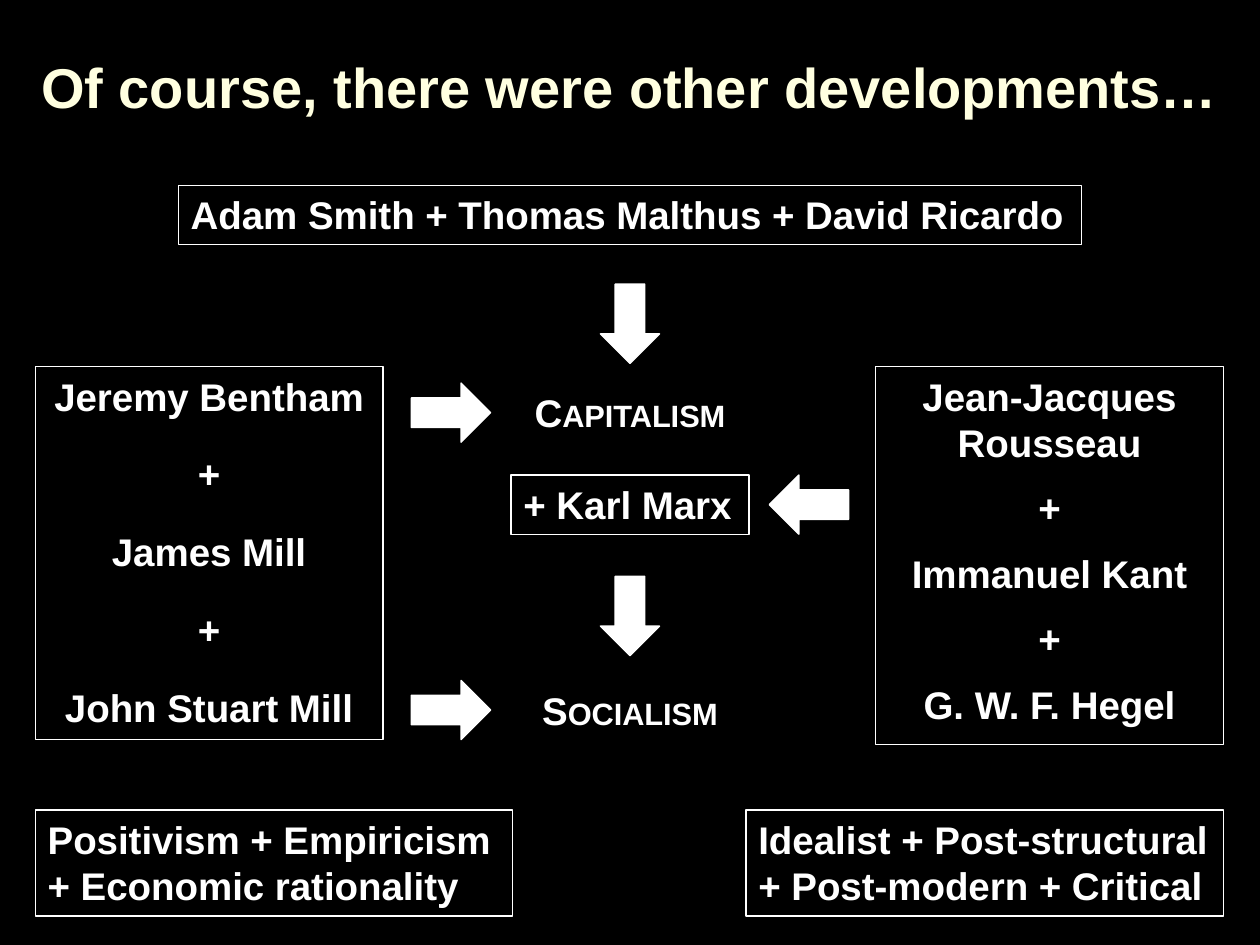
from dataclasses import dataclass

from pptx import Presentation, util as u
from pptx.dml.color import RGBColor
from pptx.enum import shapes, text


@dataclass(frozen=True)
class Theme:
    font: str = "Arial"
    ground: RGBColor = RGBColor(0, 0, 0)
    ink: RGBColor = RGBColor(255, 255, 255)
    title_ink: RGBColor = RGBColor(0xFF, 0xFF, 0xE0)
    title_size: int = 32
    body_size: int = 22
    line: float = 0.75


THEME = Theme()
WIDTH, HEIGHT = 10, 7.5

# Grid: side margins, centre line, and the axes the side arrows sit on
LEFT, CENTRE, RIGHT = 0.28, WIDTH / 2, WIDTH - 0.29
LEFT_ARROWS, RIGHT_ARROWS = 3.58, 6.42
ECONOMISTS, THINKERS, CAPITALISM, MARX, SOCIALISM, SCHOOLS = (
    1.47, 2.91, 3.04, 3.77, 5.4, 6.43)
ONE_LINE, TWO_LINES = 0.47, 0.84
SIDE_WIDTH, SCHOOL_WIDTH, LABEL_WIDTH = 2.76, 3.79, 1.77
ARROW_WIDTH, ARROW_LENGTH = 0.47, 0.63

# Content
TITLE = "Of course, there were other developments…"
# paragraphs, left, top, width, height, centred, space after
BOXES = [
    (["Adam Smith + Thomas Malthus + David Ricardo"],
     CENTRE - 7.17 / 2, ECONOMISTS, 7.17, ONE_LINE, False, 0),
    (["+ Karl Marx"], CENTRE - 1.89 / 2, MARX, 1.89, ONE_LINE, False, 0),
    (["Jeremy Bentham", "+", "James Mill", "+", "John Stuart Mill"],
     LEFT, THINKERS, SIDE_WIDTH, 2.96, True, 18),
    (["Jean-Jacques Rousseau", "+", "Immanuel Kant", "+", "G. W. F. Hegel"],
     RIGHT - SIDE_WIDTH, THINKERS, SIDE_WIDTH, 3, True, 11),
    (["Positivism + Empiricism", "+ Economic rationality"],
     LEFT, SCHOOLS, SCHOOL_WIDTH, TWO_LINES, False, 0),
    (["Idealist + Post-structural", "+ Post-modern + Critical"],
     RIGHT - SCHOOL_WIDTH, SCHOOLS, SCHOOL_WIDTH, TWO_LINES, False, 0),
]
LABELS = [("Capitalism", CAPITALISM), ("Socialism", SOCIALISM)]
# centre x, centre y, rotation of a downward arrow
DOWN, TO_LEFT, TO_RIGHT = 0, 90, 270
ARROWS = [
    (CENTRE, 2.57, DOWN),
    (CENTRE, 4.89, DOWN),
    (LEFT_ARROWS, CAPITALISM + ONE_LINE / 2, TO_RIGHT),
    (LEFT_ARROWS, SOCIALISM + ONE_LINE / 2, TO_RIGHT),
    (RIGHT_ARROWS, MARX + ONE_LINE / 2, TO_LEFT),
]


def inches(*lengths):
    return [u.Inches(length) for length in lengths]


def style(para, size, color, centred):
    para.alignment = text.PP_ALIGN.CENTER if centred else text.PP_ALIGN.LEFT
    font = para.font
    font.name, font.size, font.bold = THEME.font, u.Pt(size), True
    font.color.rgb = color


def write(shape, lines, centred, space_after=0):
    frame = shape.text_frame
    frame.word_wrap = True
    frame.vertical_anchor = text.MSO_ANCHOR.TOP
    frame.text = "\n".join(lines)
    for para in frame.paragraphs:
        style(para, THEME.body_size, THEME.ink, centred)
        para.space_after = u.Pt(space_after)


def outline(shape):
    shape.shadow.inherit = False
    shape.line.color.rgb = THEME.ink
    shape.line.width = u.Pt(THEME.line)


def add_box(page, lines, left, top, width, height, centred, space_after):
    box = page.shapes.add_shape(shapes.MSO_SHAPE.RECTANGLE,
                                *inches(left, top, width, height))
    outline(box)
    box.fill.background()
    write(box, lines, centred, space_after)


def add_label(page, name, top):
    label = page.shapes.add_textbox(
        *inches(CENTRE - LABEL_WIDTH / 2, top, LABEL_WIDTH, ONE_LINE))
    write(label, [name], True)
    span = label.text_frame.paragraphs[0].runs[0]
    span._r.get_or_add_rPr().set("cap", "small")


def add_arrow(page, x, y, rotation):
    arrow = page.shapes.add_shape(
        shapes.MSO_SHAPE.DOWN_ARROW,
        *inches(x - ARROW_WIDTH / 2, y - ARROW_LENGTH / 2,
                ARROW_WIDTH, ARROW_LENGTH))
    outline(arrow)
    arrow.fill.solid()
    arrow.fill.fore_color.rgb = THEME.ink
    arrow.rotation = rotation


def main():
    deck = Presentation()
    deck.slide_width, deck.slide_height = inches(WIDTH, HEIGHT)
    page = deck.slides.add_slide(deck.slide_layouts[5])
    page.background.fill.solid()
    page.background.fill.fore_color.rgb = THEME.ground

    # Title
    title = page.shapes.title
    title.left, title.top, title.width, title.height = inches(0, 0.05, WIDTH, 1.26)
    title.text_frame.text = TITLE
    title.text_frame.vertical_anchor = text.MSO_ANCHOR.MIDDLE
    style(title.text_frame.paragraphs[0], THEME.title_size, THEME.title_ink, True)

    # Diagram
    for box in BOXES:
        add_box(page, *box)
    for label in LABELS:
        add_label(page, *label)
    for arrow in ARROWS:
        add_arrow(page, *arrow)

    deck.save("out.pptx")


if __name__ == "__main__":
    main()
